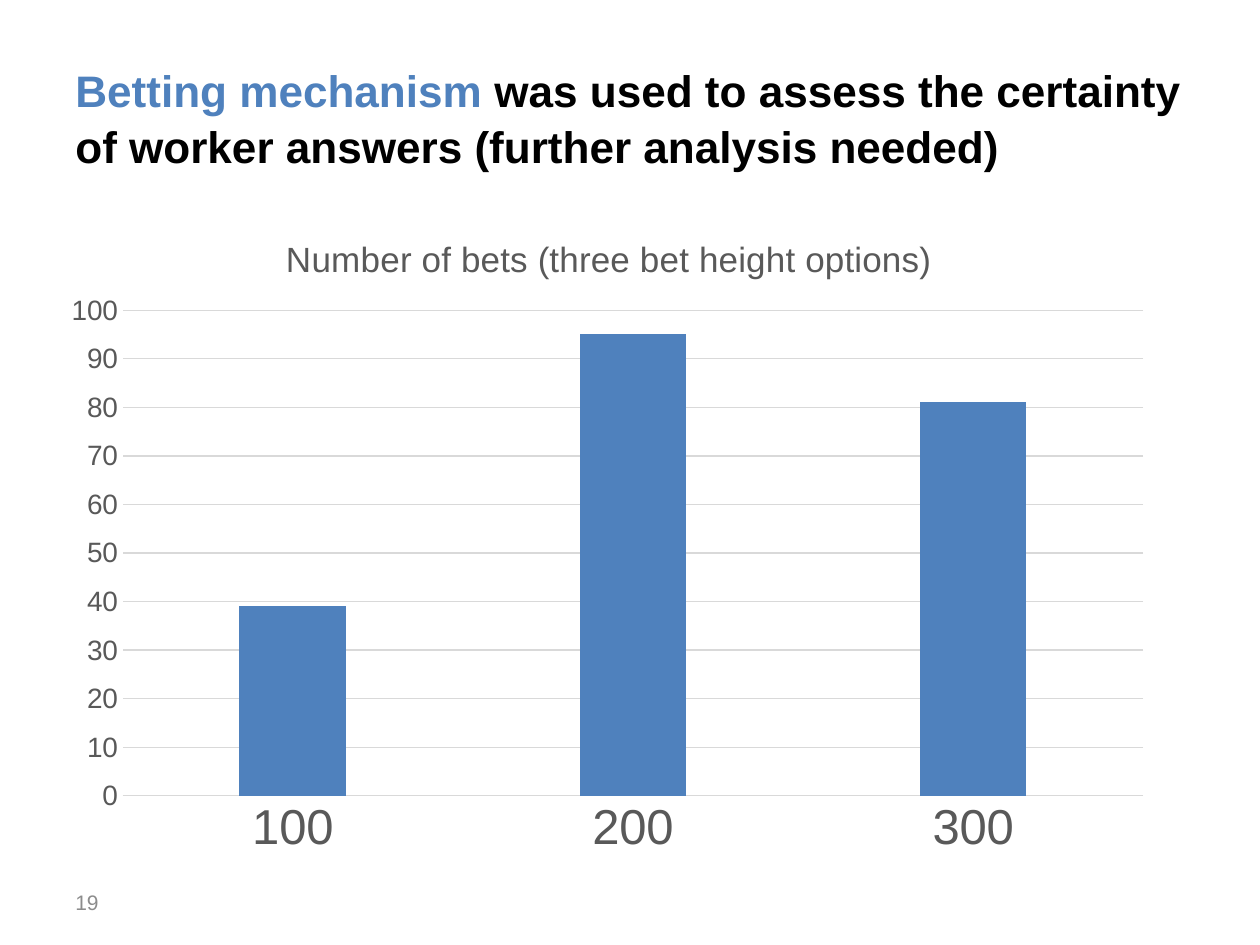
"""Build a slide with a column chart of the number of bets per bet height."""
import dataclasses

import lxml.etree
import pptx
import pptx.chart.data
import pptx.dml.color
import pptx.enum.chart
import pptx.enum.text
import pptx.oxml
import pptx.oxml.ns
import pptx.util

Cm = pptx.util.Cm
Pt = pptx.util.Pt
qn = pptx.oxml.ns.qn


@dataclasses.dataclass(frozen=True)
class Theme:
    font: str = "Arial"
    accent: str = "4F81BD"
    ink: str = "000000"
    label: str = "595959"
    grid: str = "D9D9D9"
    muted: str = "8C8C8C"
    title_size: float = 25.2
    number_size: float = 12
    chart_title_size: float = 20
    category_size: float = 28
    value_size: float = 16
    grid_width: float = 0.75


@dataclasses.dataclass(frozen=True)
class Area:
    left: float
    top: float
    width: float
    height: float

    def lengths(self) -> list:
        return [Cm(value) for value in dataclasses.astuple(self)]


THEME = Theme()
TITLE_AREA = Area(1.27, 0.76, 22.86, 3.18)
NUMBER_AREA = Area(1.27, 17.68, 5.92, 1.02)
CHART_AREA = Area(0.89, 4.11, 22.61, 13.41)
BETS = {"100": 39, "200": 95, "300": 81}


def rgb(color: str) -> pptx.dml.color.RGBColor:
    return pptx.dml.color.RGBColor.from_string(color)


def set_font(font, size: float, color: str, bold: bool = False) -> None:
    font.name = THEME.font
    font.size = Pt(size)
    font.bold = bold
    font.color.rgb = rgb(color)


def add_text(page, area: Area, pieces: list[tuple[str, str]], *, size: float,
             bold: bool = False, line_spacing: float = 1.0) -> None:
    box = page.shapes.add_textbox(*area.lengths())
    frame = box.text_frame
    frame.word_wrap = True
    frame.vertical_anchor = pptx.enum.text.MSO_ANCHOR.MIDDLE
    para = frame.paragraphs[0]
    para.line_spacing = line_spacing
    for text, color in pieces:
        span = para.add_run()
        span.text = text
        set_font(span.font, size, color, bold)


def place(parent, position: int, **settings) -> None:
    for old in parent.findall(qn("c:layout")):
        parent.remove(old)
    layout = pptx.oxml.parse_xml(f'<c:layout {pptx.oxml.ns.nsdecls("c")}/>')
    parent.insert(position, layout)
    manual = lxml.etree.SubElement(layout, qn("c:manualLayout"))
    for name, value in settings.items():
        lxml.etree.SubElement(manual, qn(f"c:{name}")).set("val", str(value))


def style_axis(axis, size: float) -> None:
    axis.major_tick_mark = pptx.enum.chart.XL_TICK_MARK.NONE
    axis.minor_tick_mark = pptx.enum.chart.XL_TICK_MARK.NONE
    set_font(axis.tick_labels.font, size, THEME.label)


def style_line(line) -> None:
    line.color.rgb = rgb(THEME.grid)
    line.width = Pt(THEME.grid_width)


def add_bet_chart(page, area: Area, title: str, bets: dict[str, int]) -> None:
    data = pptx.chart.data.CategoryChartData()
    data.categories = list(bets)
    data.add_series("Series 1", list(bets.values()))
    chart = page.shapes.add_chart(
        pptx.enum.chart.XL_CHART_TYPE.COLUMN_CLUSTERED, *area.lengths(), data).chart
    set_font(chart.font, THEME.chart_title_size, THEME.ink)
    chart.has_legend = False

    chart.has_title = True
    span = chart.chart_title.text_frame.paragraphs[0].add_run()
    span.text = title
    set_font(span.font, THEME.chart_title_size, THEME.label)

    style_axis(chart.category_axis, THEME.category_size)
    style_line(chart.category_axis.format.line)
    values = chart.value_axis
    style_axis(values, THEME.value_size)
    values.format.line.fill.background()
    values.minimum_scale, values.maximum_scale, values.major_unit = 0, 100, 10
    values.has_major_gridlines = True
    style_line(values.major_gridlines.format.line)

    plot = chart.plots[0]
    plot.gap_width = 219
    plot.overlap = -27
    plot.vary_by_categories = False
    fill = plot.series[0].format.fill
    fill.solid()
    fill.fore_color.rgb = rgb(THEME.accent)

    chart_root = chart.element.find(qn("c:chart"))
    place(chart_root.find(qn("c:title")), 1, xMode="edge", yMode="edge", x=0.21, y=0.04)
    place(chart_root.find(qn("c:plotArea")), 0, layoutTarget="inner",
          xMode="edge", yMode="edge", x=0.07, y=0.16, w=0.91, h=0.73)


def main() -> None:
    deck = pptx.Presentation()
    deck.slide_width, deck.slide_height = Cm(25.4), Cm(19.05)
    page = deck.slides.add_slide(deck.slide_layouts[6])
    add_text(page, TITLE_AREA, [
        ("Betting mechanism ", THEME.accent),
        ("was used to assess the certainty of worker answers "
         "(further analysis needed)", THEME.ink),
    ], size=THEME.title_size, bold=True, line_spacing=1.05)
    add_text(page, NUMBER_AREA, [("19", THEME.muted)], size=THEME.number_size)
    add_bet_chart(page, CHART_AREA, "Number of bets (three bet height options)", BETS)
    deck.save("out.pptx")


if __name__ == "__main__":
    main()
